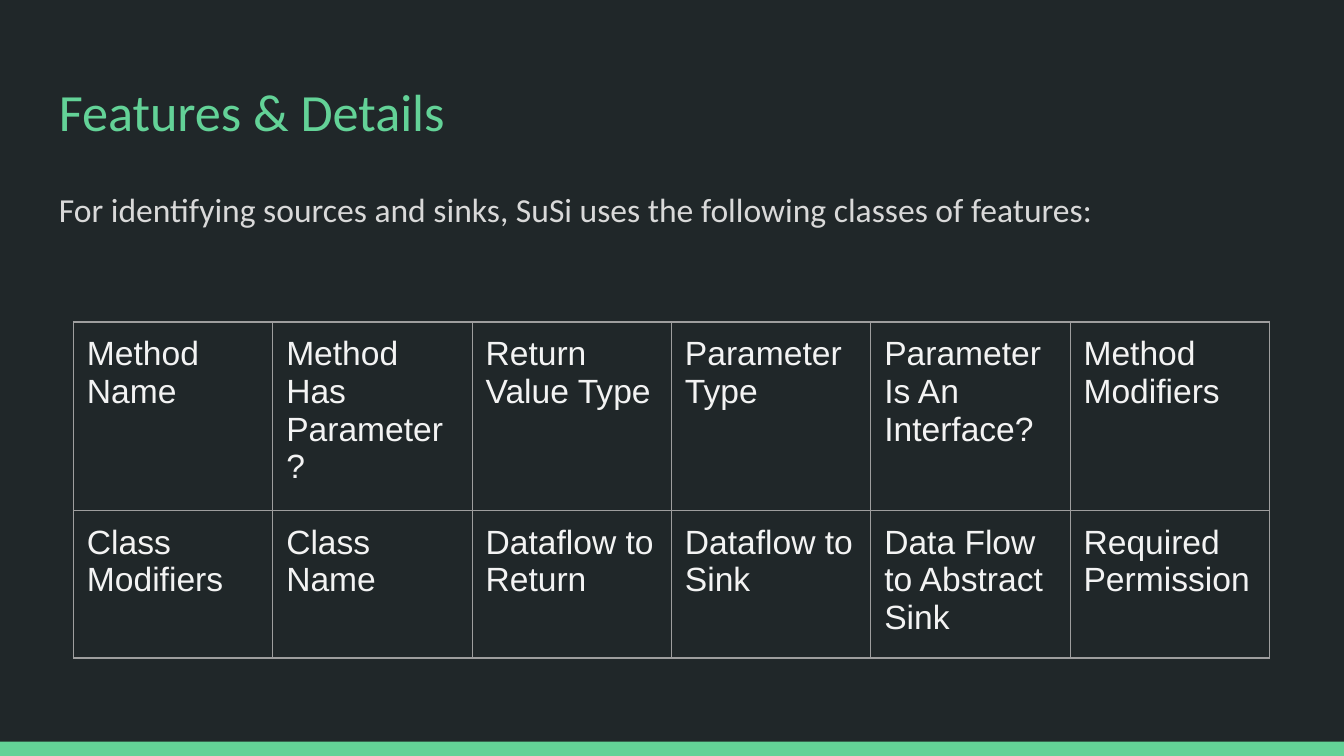
from dataclasses import dataclass

from lxml.etree import SubElement
from pptx import Presentation
from pptx.dml.color import RGBColor
from pptx.enum.shapes import MSO_SHAPE as Shape
from pptx.enum.text import MSO_ANCHOR as Anchor, PP_ALIGN as Align
from pptx.oxml.ns import qn
from pptx.util import Pt

DARK = RGBColor(0x20, 0x27, 0x29)
GREEN = RGBColor(0x63, 0xD2, 0x97)
GREY = RGBColor(0xD9, 0xD9, 0xD9)
PALE = RGBColor(0xF3, 0xF3, 0xF3)
RULE = RGBColor(0x9E, 0x9E, 0x9E)

WIDE, HIGH = 720, 405
PAD = 7.2
COL, ROW = 106.8, 30

ROWS = (
    ("Method Name", "Method Has Parameter?", "Return Value Type",
     "Parameter Type", "Parameter Is An Interface?", "Method Modifiers"),
    ("Class Modifiers", "Class Name", "Dataflow to Return",
     "Dataflow to Sink", "Data Flow to Abstract Sink", "Required Permission"),
)


@dataclass(frozen=True)
class Box:
    left: float
    top: float
    width: float
    height: float

    def place(self) -> tuple:
        return Pt(self.left), Pt(self.top), Pt(self.width), Pt(self.height)


def write(frame, text: str, *, size: float, color: RGBColor,
          font: str = "Calibri", lead: float = 1.0, after: float = 0) -> None:
    frame.word_wrap = True
    par = frame.paragraphs[0]
    par.alignment = Align.LEFT
    par.line_spacing = lead
    par.space_after = Pt(after)
    run = par.add_run()
    run.text = text
    run.font.name = font
    run.font.size = Pt(size)
    run.font.color.rgb = color


def pad(item) -> None:
    """Set equal margins and top anchoring on a cell or text frame."""
    item.margin_left = item.margin_right = Pt(PAD)
    item.margin_top = item.margin_bottom = Pt(PAD)
    item.vertical_anchor = Anchor.TOP


def add_text(slide, box: Box, text: str, **style) -> None:
    frame = slide.shapes.add_textbox(*box.place()).text_frame
    pad(frame)
    write(frame, text, **style)


def add_bar(slide, box: Box, color: RGBColor) -> None:
    bar = slide.shapes.add_shape(Shape.RECTANGLE, *box.place())
    bar.shadow.inherit = False
    bar.fill.solid()
    bar.fill.fore_color.rgb = color
    bar.line.fill.background()


def edge(cell, color: RGBColor, width: float) -> None:
    """Draw all four cell borders, ahead of the fill as the schema asks."""
    props = cell._tc.get_or_add_tcPr()
    for spot, side in enumerate(("lnL", "lnR", "lnT", "lnB")):
        line = SubElement(props, qn(f"a:{side}"), w=str(Pt(width)))
        fill = SubElement(line, qn("a:solidFill"))
        SubElement(fill, qn("a:srgbClr"), val=str(color))
        props.insert(spot, line)


def add_grid(slide, left: float, top: float, rows: tuple) -> None:
    tall, wide = len(rows), len(rows[0])
    box = Box(left, top, wide * COL, tall * ROW)
    table = slide.shapes.add_table(tall, wide, *box.place()).table
    table.first_row = table.horz_banding = False
    for col in table.columns:
        col.width = Pt(COL)
    for row, texts in zip(table.rows, rows):
        row.height = Pt(ROW)
        for cell, text in zip(row.cells, texts):
            pad(cell)
            cell.fill.background()
            edge(cell, RULE, 0.75)
            write(cell.text_frame, text, size=18, color=PALE, font="Arial")


def main() -> None:
    deck = Presentation()
    deck.slide_width, deck.slide_height = Pt(WIDE), Pt(HIGH)
    slide = deck.slides.add_slide(deck.slide_layouts[6])
    slide.background.fill.solid()
    slide.background.fill.fore_color.rgb = DARK

    add_bar(slide, Box(0, 397.4, WIDE, HIGH - 397.4), GREEN)
    add_text(slide, Box(24.5, 35, 671, 45), "Features & Details",
             size=28, color=GREEN)
    add_text(slide, Box(24.5, 90.75, 671, 269),
             "For identifying sources and sinks, SuSi uses the following "
             "classes of features:",
             size=18, color=GREY, lead=1.15, after=16)
    add_grid(slide, 39.4, 172.5, ROWS)
    deck.save("out.pptx")


if __name__ == "__main__":
    main()
